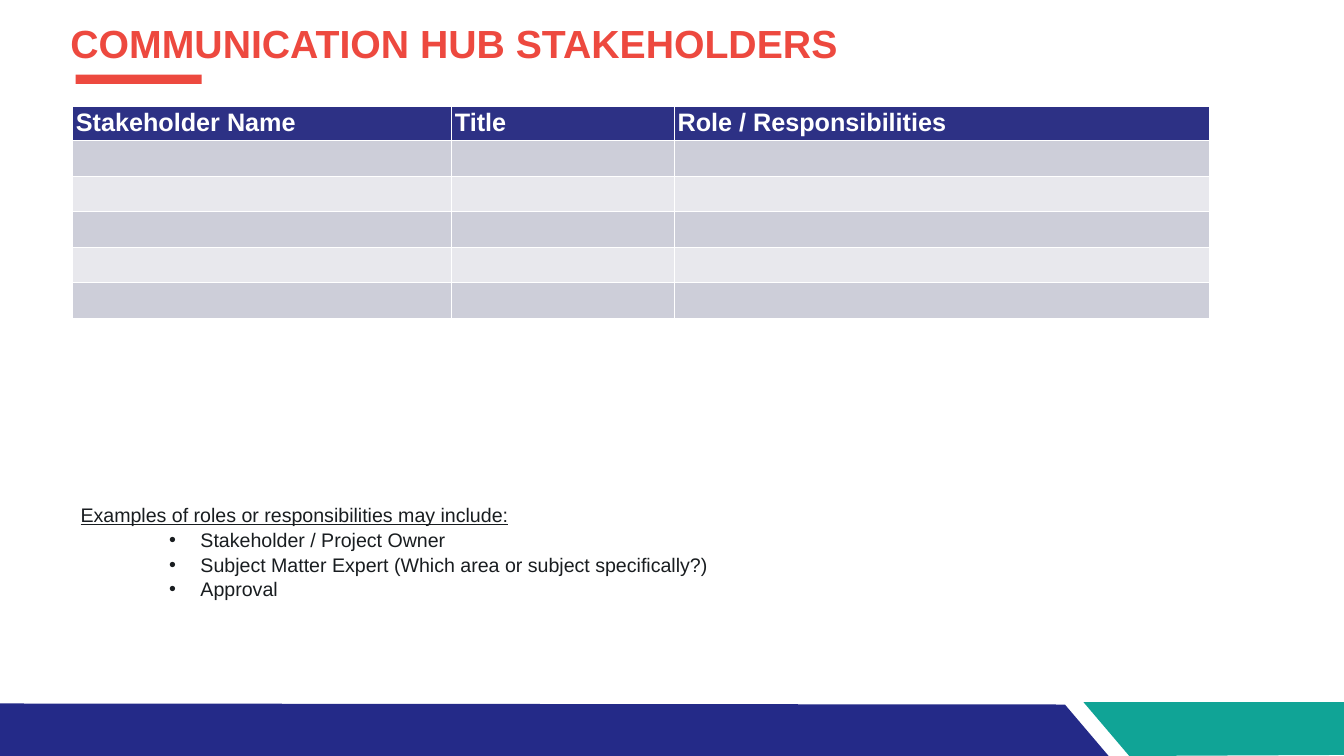
from lxml import etree
from pptx import Presentation
from pptx import util as u
from pptx.dml.color import RGBColor
from pptx.enum import shapes, text
from pptx.oxml import ns

NAVY = RGBColor(0x24, 0x2A, 0x88)
TEAL = RGBColor(0x10, 0xA4, 0x96)
CORAL = RGBColor(0xED, 0x49, 0x3F)
INK = RGBColor(0x19, 0x1D, 0x20)
WHITE = RGBColor(0xFF, 0xFF, 0xFF)
HEADER_FILL = RGBColor(0x2D, 0x31, 0x85)
BAND_FILLS = (RGBColor(0xCD, 0xCE, 0xD9), RGBColor(0xE8, 0xE8, 0xED))

WIDTH, HEIGHT = 1920.24, 1080
LINE_SPACING = 1.05

HEADERS = ("Stakeholder Name", "Title", "Role / Responsibilities")
COLUMN_WIDTHS = (541.44, 318.24, 764.64)
HEADER_HEIGHT, ROW_HEIGHT, EMPTY_ROWS = 48.6, 50.8, 5

ROLES_HEADING = "Examples of roles or responsibilities may include:"
ROLES = (
    "Stakeholder / Project Owner",
    "Subject Matter Expert (Which area or subject specifically?)",
    "Approval",
)


def paint(shape, color):
    shape.fill.solid()
    shape.fill.fore_color.rgb = color
    shape.line.fill.background()
    shape.shadow.inherit = False


def set_font(paragraph, size, color, bold=False, underline=False):
    font = paragraph.font
    font.name, font.size = "Arial", u.Pt(size)
    font.bold, font.underline = bold, underline
    font.color.rgb = color


def add_polygon(slide, points, color):
    corners = [(u.Pt(x), u.Pt(y)) for x, y in points]
    builder = slide.shapes.build_freeform(*corners[0])
    builder.add_line_segments(corners[1:], close=True)
    paint(builder.convert_to_shape(), color)


def add_title(slide, title):
    shape = slide.shapes.title
    shape.left, shape.top = u.Pt(96.5), u.Pt(23.76)
    shape.width, shape.height = u.Pt(1728), u.Pt(74.88)
    frame = shape.text_frame
    frame.margin_left = u.Pt(4)
    frame.margin_top = frame.margin_bottom = u.Pt(3.6)
    frame.vertical_anchor = text.MSO_ANCHOR.BOTTOM
    frame.auto_size = text.MSO_AUTO_SIZE.NONE
    paragraph = frame.paragraphs[0]
    paragraph.text = title
    paragraph.alignment = text.PP_ALIGN.LEFT
    paragraph.line_spacing = LINE_SPACING
    set_font(paragraph, 56, CORAL, bold=True)


def add_bar(slide, left, top, width, height, color):
    bar = slide.shapes.add_shape(
        shapes.MSO_SHAPE.RECTANGLE,
        u.Pt(left), u.Pt(top), u.Pt(width), u.Pt(height))
    paint(bar, color)


def add_stakeholder_table(slide):
    heights = [HEADER_HEIGHT] + [ROW_HEIGHT] * EMPTY_ROWS
    table = slide.shapes.add_table(
        len(heights), len(HEADERS), u.Pt(103.5), u.Pt(152),
        u.Pt(sum(COLUMN_WIDTHS)), u.Pt(sum(heights))).table
    for column, width in zip(table.columns, COLUMN_WIDTHS):
        column.width = u.Pt(width)
    for index, (row, height) in enumerate(zip(table.rows, heights)):
        row.height = u.Pt(height)
        for cell in row.cells:
            cell.fill.solid()
            cell.fill.fore_color.rgb = (
                BAND_FILLS[(index - 1) % 2] if index else HEADER_FILL)
    for cell, header in zip(table.rows[0].cells, HEADERS):
        cell.margin_left = u.Pt(5)
        cell.margin_top = cell.margin_bottom = u.Pt(3)
        paragraph = cell.text_frame.paragraphs[0]
        paragraph.text = header
        set_font(paragraph, 36, WHITE, bold=True)


def add_bullet(paragraph, left, hanging):
    properties = paragraph._p.get_or_add_pPr()
    properties.set("marL", str(u.Pt(left)))
    properties.set("indent", str(-u.Pt(hanging)))
    etree.SubElement(properties, ns.qn("a:buFont"), typeface="Arial")
    etree.SubElement(properties, ns.qn("a:buChar"), char="•")


def add_roles(slide):
    box = slide.shapes.add_textbox(
        u.Pt(108), u.Pt(713.5), u.Pt(1368.72), u.Pt(143.28))
    frame = box.text_frame
    frame.word_wrap = True
    heading = frame.paragraphs[0]
    heading.text = ROLES_HEADING
    heading.line_spacing = LINE_SPACING
    set_font(heading, 28, INK, underline=True)
    for role in ROLES:
        paragraph = frame.add_paragraph()
        paragraph.text = role
        paragraph.level = 1
        add_bullet(paragraph, 171.36, 44.64)
        paragraph.line_spacing = LINE_SPACING
        set_font(paragraph, 28, INK)


def main():
    presentation = Presentation()
    presentation.slide_width = u.Pt(WIDTH)
    presentation.slide_height = u.Pt(HEIGHT)
    slide = presentation.slides.add_slide(presentation.slide_layouts[5])

    # Footer bands
    add_polygon(slide, [(0, 1005), (1521.5, 1006.5),
                        (1584, HEIGHT), (0, HEIGHT)], NAVY)
    add_polygon(slide, [(1548, 1003), (WIDTH, 1003),
                        (WIDTH, 1078.5), (1613.5, HEIGHT)], TEAL)

    # Heading with its accent bar
    add_title(slide, "COMMUNICATION HUB STAKEHOLDERS")
    add_bar(slide, 108, 106.5, 180, 13.5, CORAL)

    # Stakeholder table and role examples
    add_stakeholder_table(slide)
    add_roles(slide)

    presentation.save("out.pptx")


if __name__ == "__main__":
    main()
